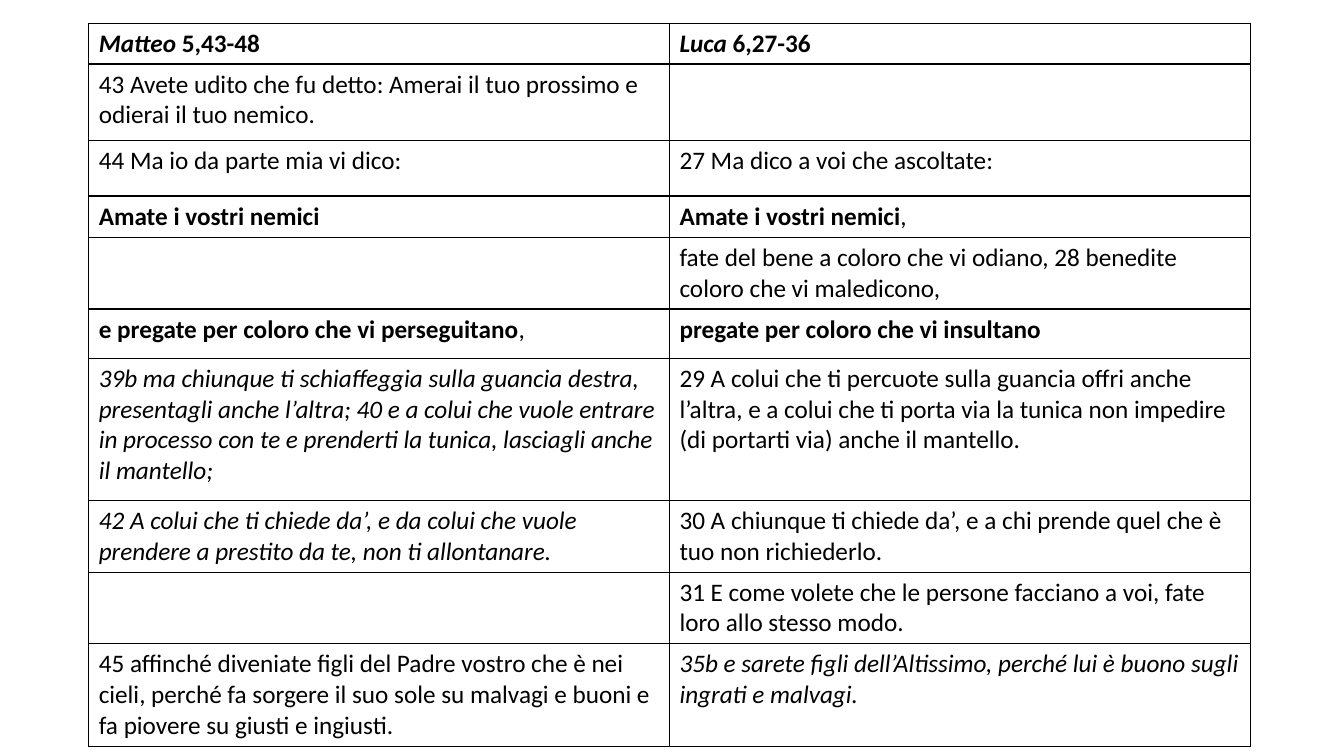
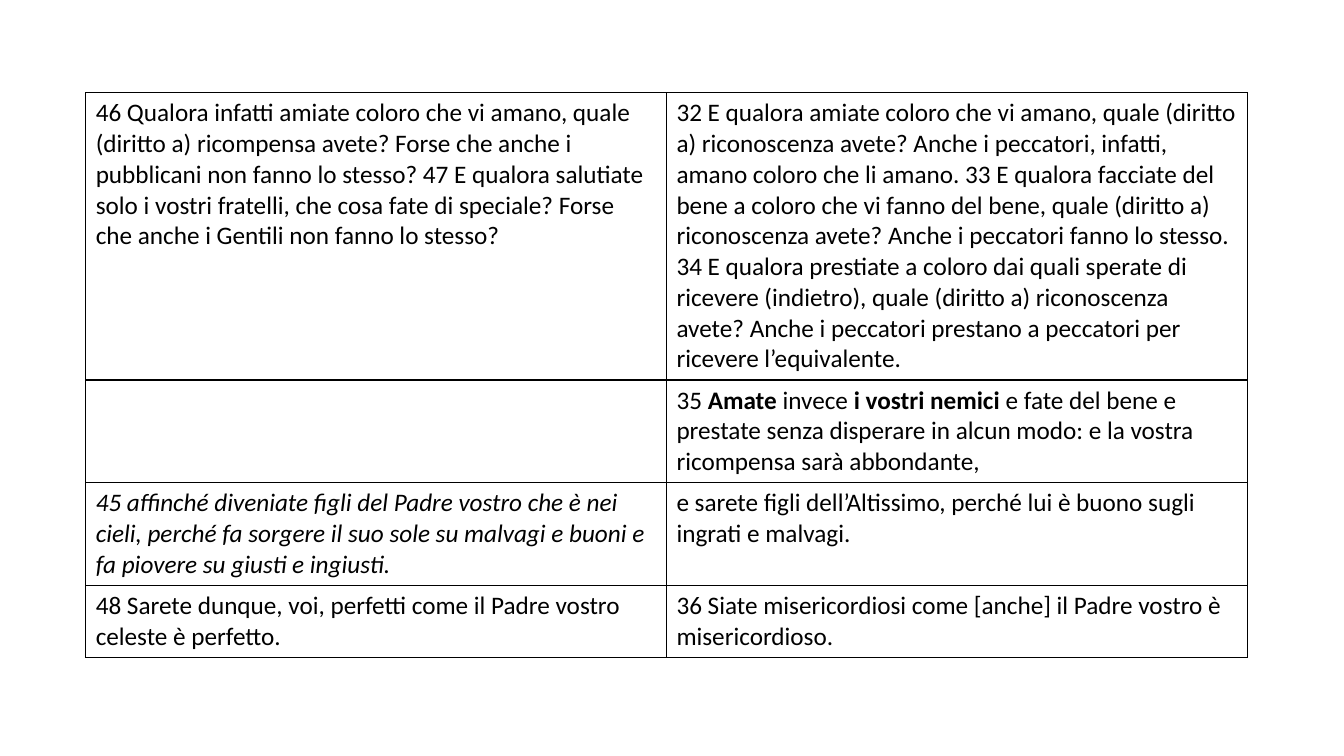
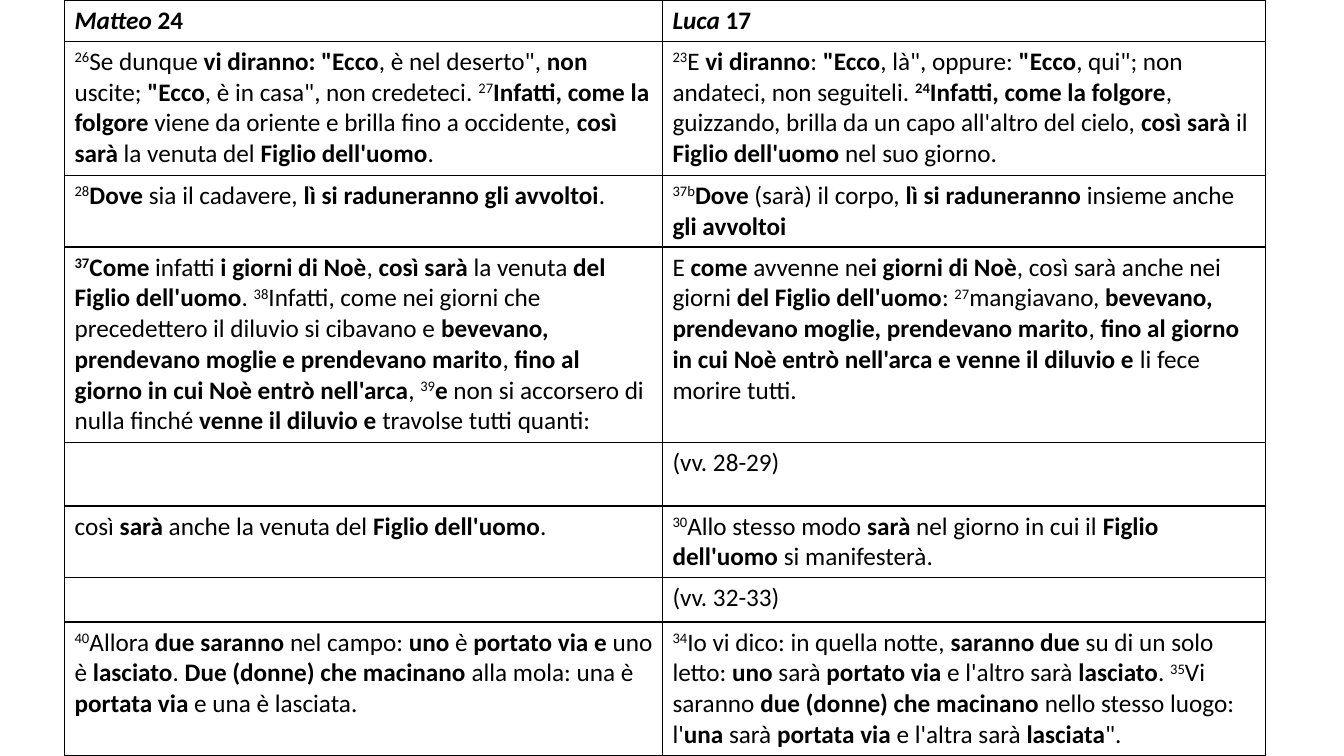
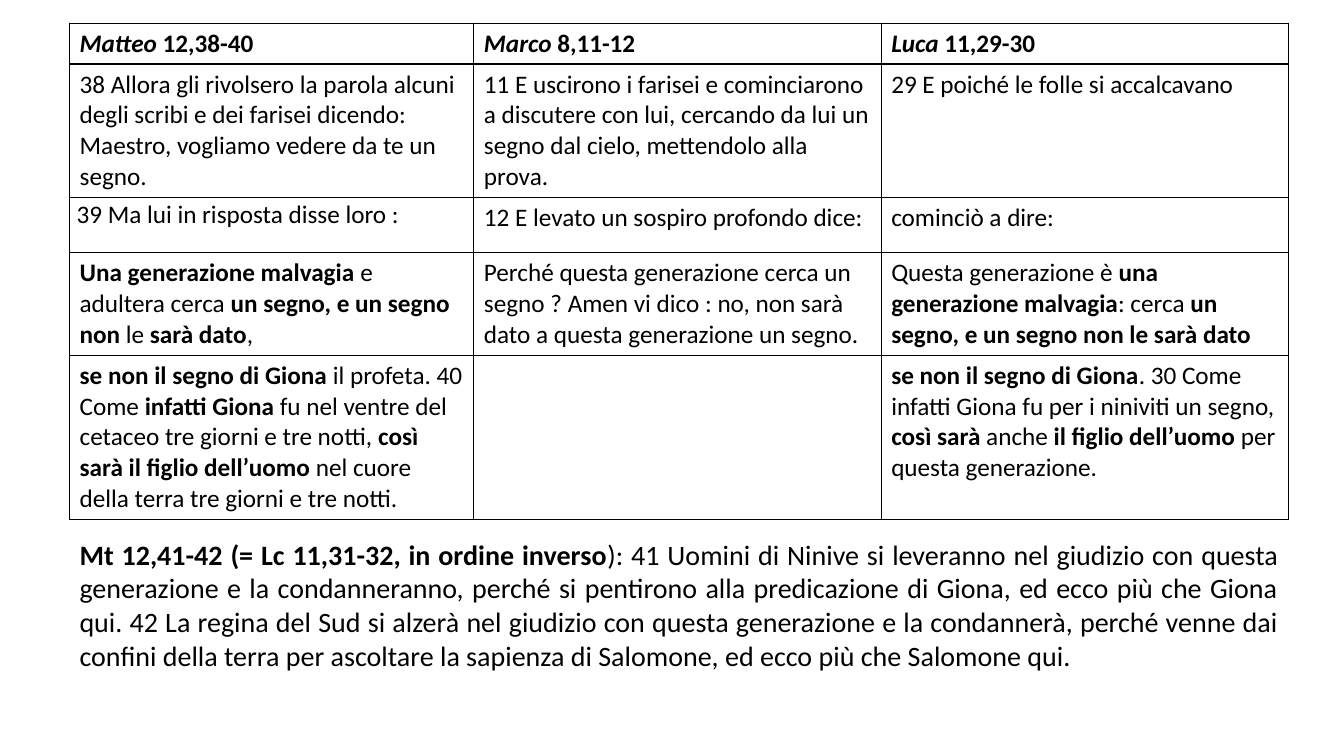
from lxml.etree import SubElement
from pptx import Presentation
from pptx.dml.color import RGBColor
from pptx.enum.text import MSO_AUTO_SIZE, PP_ALIGN
from pptx.oxml.ns import qn
from pptx.util import Inches, Pt

INK = RGBColor(0x00, 0x00, 0x00)
FONT = "Calibri"
TABLE_SIZE, NOTE_SIZE = Pt(18), Pt(20)
BORDER = Pt(1)

# Inline marks in the verses: *bold*, _italic_, ^superscript^
LOVE_OF_ENEMIES = [
    ("*_Matteo_ 5,43-48*", "*_Luca_ 6,27-36*"),
    ("43 Avete udito che fu detto: Amerai il tuo prossimo e odierai il tuo nemico.", ""),
    ("44 Ma io da parte mia vi dico:", "27 Ma dico a voi che ascoltate:"),
    ("*Amate i vostri nemici*", "*Amate i vostri nemici*,"),
    ("", "fate del bene a coloro che vi odiano, 28 benedite coloro che vi maledicono,"),
    ("*e pregate per coloro che vi perseguitano*,", "*pregate per coloro che vi insultano*"),
    ("_39b ma chiunque ti schiaffeggia sulla guancia destra, presentagli anche l’altra; "
     "40 e a colui che vuole entrare in processo con te e prenderti la tunica, "
     "lasciagli anche il mantello;_",
     "29 A colui che ti percuote sulla guancia offri anche l’altra, e a colui che ti porta "
     "via la tunica non impedire (di portarti via) anche il mantello."),
    ("_42 A colui che ti chiede da’, e da colui che vuole prendere a prestito da te, "
     "non ti allontanare._",
     "30 A chiunque ti chiede da’, e a chi prende quel che è tuo non richiederlo."),
    ("", "31 E come volete che le persone facciano a voi, fate loro allo stesso modo."),
    ("45 affinché diveniate figli del Padre vostro che è nei cieli, perché fa sorgere il "
     "suo sole su malvagi e buoni e fa piovere su giusti e ingiusti.",
     "_35b e sarete figli dell’Altissimo, perché lui è buono sugli ingrati e malvagi._"),
]

REWARD = [
    ("46 Qualora infatti amiate coloro che vi amano, quale (diritto a) ricompensa avete? "
     "Forse che anche i pubblicani non fanno lo stesso? 47 E qualora salutiate solo i vostri "
     "fratelli, che cosa fate di speciale? Forse che anche i Gentili non fanno lo stesso?",
     "32 E qualora amiate coloro che vi amano, quale (diritto a) riconoscenza avete? Anche i "
     "peccatori, infatti, amano coloro che li amano. 33 E qualora facciate del bene a coloro "
     "che vi fanno del bene, quale (diritto a) riconoscenza avete? Anche i peccatori fanno lo "
     "stesso. 34 E qualora prestiate a coloro dai quali sperate di ricevere (indietro), quale "
     "(diritto a) riconoscenza avete? Anche i peccatori prestano a peccatori per ricevere "
     "l’equivalente."),
    ("", "35 *Amate *invece* i vostri nemici* e fate del bene e prestate senza disperare in "
         "alcun modo: e la vostra ricompensa sarà abbondante,"),
    ("_45 affinché diveniate figli del Padre vostro che è nei cieli, perché fa sorgere il "
     "suo sole su malvagi e buoni e fa piovere su giusti e ingiusti._",
     "e sarete figli dell’Altissimo, perché lui è buono sugli ingrati e malvagi."),
    ("48 Sarete dunque, voi, perfetti come il Padre vostro celeste è perfetto.",
     "36 Siate misericordiosi come [anche] il Padre vostro è misericordioso."),
]

SON_OF_MAN = [
    ("*_Matteo_ 24*", "*_Luca_ 17*"),
    ("""^26^Se dunque *vi diranno: "Ecco*, è nel deserto", *non *uscite; *"Ecco*, è in casa", """
     "non credeteci. ^27^*Infatti, come la folgore* viene da oriente e brilla fino a "
     "occidente, *così sarà* la venuta del* Figlio dell'uomo*.",
     """^23^E *vi diranno*: *"Ecco*, là", oppure: *"Ecco*, qui"; non andateci, non seguiteli. """
     "*^24^Infatti, come la folgore*, guizzando, brilla da un capo all'altro del cielo, "
     "*così sarà* il *Figlio dell'uomo* nel suo giorno."),
    ("^28^*Dove* sia il cadavere, *lì si raduneranno gli avvoltoi*.",
     "^37b^*Dove* (sarà) il corpo, *lì si raduneranno* insieme anche *gli avvoltoi*"),
    ("*^37^Come* infatti *i giorni di Noè*, *così sarà* la venuta *del Figlio dell'uomo*. "
     "^38^Infatti, come nei giorni che precedettero il diluvio si cibavano e *bevevano, "
     "prendevano moglie e prendevano marito*, *fino al giorno in cui Noè entrò nell'arca*, "
     "^39^*e *non si accorsero di nulla finché *venne il diluvio e* travolse tutti quanti:",
     "E *come* avvenne ne*i giorni di Noè*, così sarà anche nei giorni *del Figlio "
     "dell'uomo*: ^27^mangiavano, *bevevano, prendevano moglie, prendevano marito*, *fino al "
     "giorno in cui Noè entrò nell'arca e venne il diluvio e* li fece morire tutti."),
    ("", "(vv. 28-29)"),
    ("così *sarà* anche la venuta del *Figlio dell'uomo*.",
     "^30^Allo stesso modo *sarà* nel giorno in cui il *Figlio dell'uomo* si manifesterà."),
    ("", "(vv. 32-33)"),
    ("^40^Allora *due saranno *nel campo: *uno* è *portato via e *uno è *lasciato*. *Due "
     "(donne) che macinano* alla mola: una è *portata via* e una è lasciata.",
     "^34^Io vi dico: in quella notte, *saranno due* su di un solo letto: *uno *sarà *portato "
     "via* e l'altro sarà *lasciato*. ^35^Vi saranno *due (donne) che macinano *nello stesso "
     """luogo: l'*una* sarà *portata via* e l'altra sarà *lasciata*"."""),
]

SIGN_OF_JONAH = [
    ("*_Matteo_ 12,38-40*", "*_Marco_ 8,11-12*", "*_Luca_ 11,29-30*"),
    ("38 Allora gli rivolsero la parola alcuni degli scribi e dei farisei dicendo: Maestro, "
     "vogliamo vedere da te un segno.",
     "11 E uscirono i farisei e cominciarono a discutere con lui, cercando da lui un segno "
     "dal cielo, mettendolo alla prova.",
     "29 E poiché le folle si accalcavano"),
    ("39 Ma lui in risposta disse loro :", "12 E levato un sospiro profondo dice:",
     "cominciò a dire:"),
    ("*Una generazione malvagia* e adultera cerca *un segno, e un segno non *le* sarà dato*,",
     "Perché questa generazione cerca un segno ? Amen vi dico : no, non sarà dato a questa "
     "generazione un segno.",
     "Questa generazione è *una generazione malvagia*: cerca *un segno, e un segno non le "
     "sarà dato*"),
    ("*se non il segno di Giona* il profeta. 40 Come *infatti Giona* fu nel ventre del "
     "cetaceo tre giorni e tre notti, *così sarà il figlio dell’uomo* nel cuore della terra "
     "tre giorni e tre notti.",
     "",
     "*se non il segno di Giona*. 30 Come infatti Giona fu per i niniviti un segno, *così "
     "sarà *anche *il figlio dell’uomo *per questa generazione."),
]

NINEVEH = (
    "*Mt 12,41-42 (= Lc 11,31-32, in ordine inverso*): 41 Uomini di Ninive si leveranno nel "
    "giudizio con questa generazione e la condanneranno, perché si pentirono alla predicazione "
    "di Giona, ed ecco più che Giona qui. 42 La regina del Sud si alzerà nel giudizio con "
    "questa generazione e la condannerà, perché venne dai confini della terra per ascoltare "
    "la sapienza di Salomone, ed ecco più che Salomone qui."
)

# Each synopsis: verses, left, top, column widths, row heights (inches)
SYNOPSES = [
    (LOVE_OF_ENEMIES, 0.88, 0.23, [5.76] * 2,
     [0.4, 0.76, 0.55, 0.41, 0.71, 0.49, 1.41, 0.71, 0.71, 1.02]),
    (REWARD, 0.85, 0.92, [5.76] * 2, [2.85, 1.02, 1.02, 0.71]),
    (SON_OF_MAN, 0.64, 0, [5.93, 5.98], [0.41, 1.33, 0.71, 1.94, 0.63, 0.71, 0.44, 1.33]),
    (SIGN_OF_JONAH, 0.69, 0.23, [4.01, 4.04, 4.04], [0.4, 1.32, 0.55, 1.02, 1.63]),
]


def split_marks(verse):
    """Yield (text, active marks) for each stretch between marks."""
    active, stretch = set(), ""
    for letter in verse:
        if letter in "*_^":
            if stretch:
                yield stretch, frozenset(active)
            active ^= {letter}
            stretch = ""
        else:
            stretch += letter
    if stretch:
        yield stretch, frozenset(active)


def write_verse(paragraph, verse, size):
    for text, marks in split_marks(verse):
        run = paragraph.add_run()
        run.text = text
        font = run.font
        font.name, font.size = FONT, size
        font.color.rgb = INK
        font.bold, font.italic = "*" in marks, "_" in marks
        if "^" in marks:
            font._element.set("baseline", "30000")


def draw_borders(cell):
    properties = cell._tc.get_or_add_tcPr()
    for position, side in enumerate(("lnL", "lnR", "lnT", "lnB")):
        line = SubElement(properties, qn(f"a:{side}"), w=str(BORDER))
        fill = SubElement(line, qn("a:solidFill"))
        SubElement(fill, qn("a:srgbClr"), val=str(INK))
        properties.insert(position, line)


def add_synopsis(slide, verses, left, top, widths, heights):
    table = slide.shapes.add_table(
        len(heights), len(widths), Inches(left), Inches(top),
        Inches(sum(widths)), Inches(sum(heights))).table
    table.first_row = table.horz_banding = False
    for column, width in zip(table.columns, widths):
        column.width = Inches(width)
    for row, height, row_verses in zip(table.rows, heights, verses):
        row.height = Inches(height)
        for cell, verse in zip(row.cells, row_verses):
            cell.fill.background()
            draw_borders(cell)
            write_verse(cell.text_frame.paragraphs[0], verse, TABLE_SIZE)
    return table


def main():
    deck = Presentation()
    deck.slide_width, deck.slide_height = Inches(13.33), Inches(7.5)
    blank = deck.slide_layouts[6]

    for synopsis in SYNOPSES:
        slide = deck.slides.add_slide(blank)
        table = add_synopsis(slide, *synopsis)

    # Tighter reply of Jesus in the last synopsis
    reply = table.cell(2, 0)
    reply.margin_left = reply.margin_right = Inches(0.07)
    reply.margin_top = reply.margin_bottom = 0
    reply_line = reply.text_frame.paragraphs[0]
    reply_line.line_spacing, reply_line.space_after = 1.07, Pt(8)

    # Passage below the last synopsis
    nineveh = slide.shapes.add_textbox(
        Inches(0.69), Inches(5.28), Inches(12.09), Inches(1.45)).text_frame
    nineveh.word_wrap = True
    nineveh.auto_size = MSO_AUTO_SIZE.SHAPE_TO_FIT_TEXT
    passage = nineveh.paragraphs[0]
    passage.alignment = PP_ALIGN.JUSTIFY
    write_verse(passage, NINEVEH, NOTE_SIZE)

    deck.save("out.pptx")


if __name__ == "__main__":
    main()
